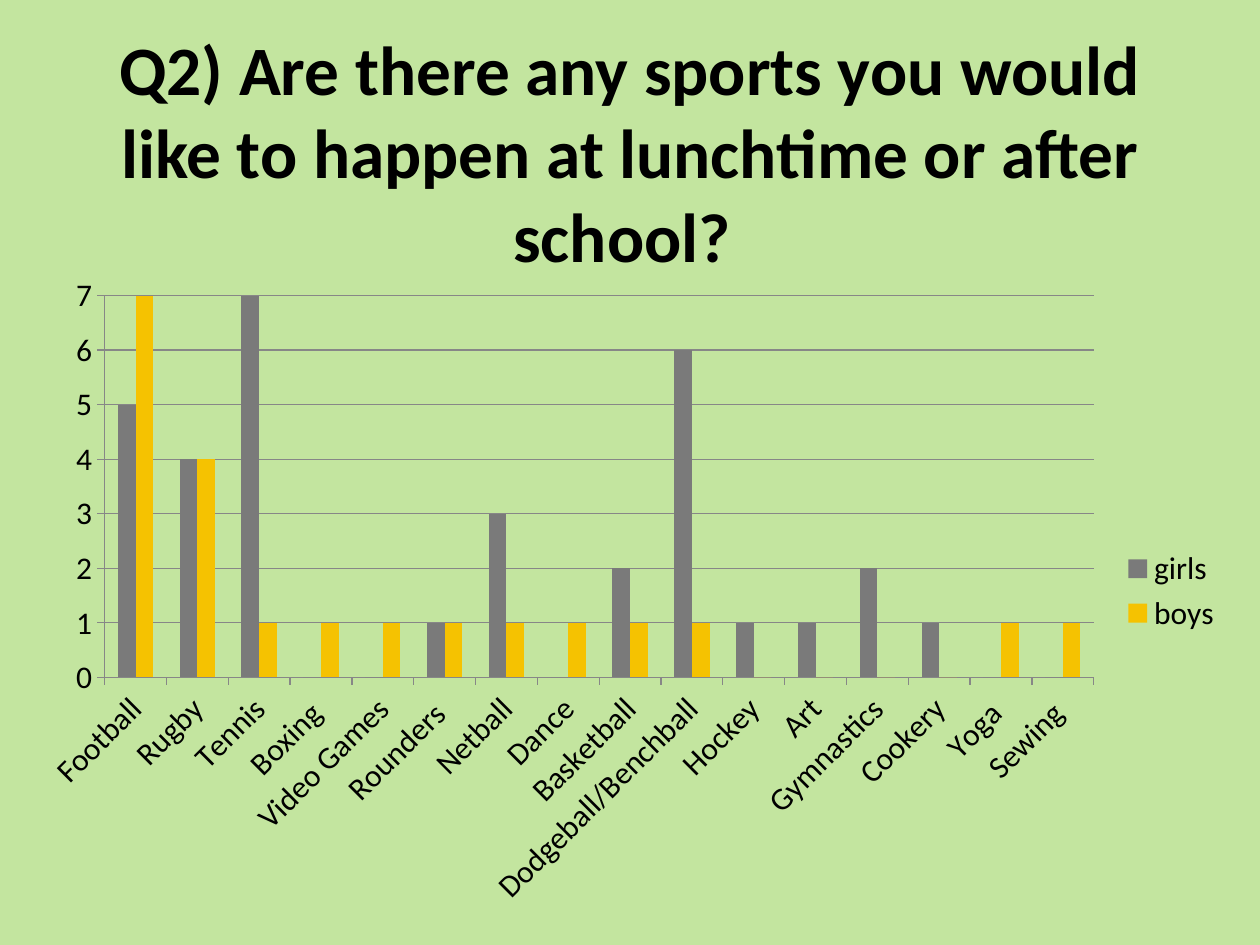
from typing import NamedTuple

from pptx import Presentation
from pptx.chart.data import CategoryChartData
from pptx.dml.color import RGBColor
from pptx.enum.chart import XL_CHART_TYPE, XL_LEGEND_POSITION, XL_TICK_MARK
from pptx.enum.text import MSO_ANCHOR, PP_ALIGN
from pptx.util import Inches, Pt

COLUMNS = XL_CHART_TYPE.COLUMN_CLUSTERED
LEGEND_RIGHT = XL_LEGEND_POSITION.RIGHT
TICK_OUT, TICK_NONE = XL_TICK_MARK.OUTSIDE, XL_TICK_MARK.NONE
MIDDLE, CENTER = MSO_ANCHOR.MIDDLE, PP_ALIGN.CENTER

FONT = "Calibri"
BLACK, GREEN, LINE_GRAY = "000000", "C3E59F", "878787"
TITLE = "Q2) Are there any sports you would like to happen at lunchtime or after school? "


class Group(NamedTuple):
    name: str
    votes: tuple[int, ...]
    color: str


SPORTS = (
    "Football", "Rugby", "Tennis", "Boxing ", "Video Games", "Rounders ",
    "Netball", "Dance", "Basketball", "Dodgeball/Benchball", "Hockey", "Art",
    "Gymnastics", "Cookery", "Yoga ", "Sewing ",
)
GROUPS = (
    Group("girls", (5, 4, 7, 0, 0, 1, 3, 0, 2, 6, 1, 1, 2, 1, 0, 0), "7A7A7A"),
    Group("boys", (7, 4, 1, 1, 1, 1, 1, 1, 1, 1, 0, 0, 0, 0, 1, 1), "F5C201"),
)


def rgb(color: str) -> RGBColor:
    return RGBColor.from_string(color)


def style_font(font, size: float, bold: bool = False) -> None:
    font.name, font.size, font.bold = FONT, Pt(size), bold
    font.color.rgb = rgb(BLACK)


def style_line(line) -> None:
    line.color.rgb = rgb(LINE_GRAY)
    line.width = Pt(0.72)


def add_title(s) -> None:
    box = s.shapes.add_textbox(Inches(0.5), Inches(0.3), Inches(9), Inches(1.8))
    tf = box.text_frame
    tf.word_wrap = True
    tf.vertical_anchor = MIDDLE
    p = tf.paragraphs[0]
    p.text = TITLE
    p.alignment = CENTER
    style_font(p.font, 39.6, bold=True)


def add_votes_chart(s) -> None:
    data = CategoryChartData()
    data.categories = SPORTS
    for group in GROUPS:
        data.add_series(group.name, group.votes)
    chart = s.shapes.add_chart(
        COLUMNS, Inches(0.19), Inches(2.09), Inches(9.61), Inches(5.2), data
    ).chart
    style_font(chart.font, 18)
    chart.has_title = False
    chart.has_legend = True
    chart.legend.position = LEGEND_RIGHT
    chart.legend.include_in_layout = False

    plot = chart.plots[0]
    plot.gap_width, plot.overlap = 150, 0
    plot.vary_by_categories = False
    for series, group in zip(plot.series, GROUPS):
        series.format.fill.solid()
        series.format.fill.fore_color.rgb = rgb(group.color)

    for axis in (chart.category_axis, chart.value_axis):
        axis.major_tick_mark, axis.minor_tick_mark = TICK_OUT, TICK_NONE
        style_line(axis.format.line)
    votes = chart.value_axis
    votes.minimum_scale, votes.maximum_scale, votes.major_unit = 0, 7, 1
    votes.has_major_gridlines = True
    style_line(votes.major_gridlines.format.line)


def main() -> None:
    prs = Presentation()
    prs.slide_width, prs.slide_height = Inches(10), Inches(7.5)
    s = prs.slides.add_slide(prs.slide_layouts[6])
    s.background.fill.solid()
    s.background.fill.fore_color.rgb = rgb(GREEN)
    add_title(s)
    add_votes_chart(s)
    prs.save("out.pptx")


if __name__ == "__main__":
    main()
